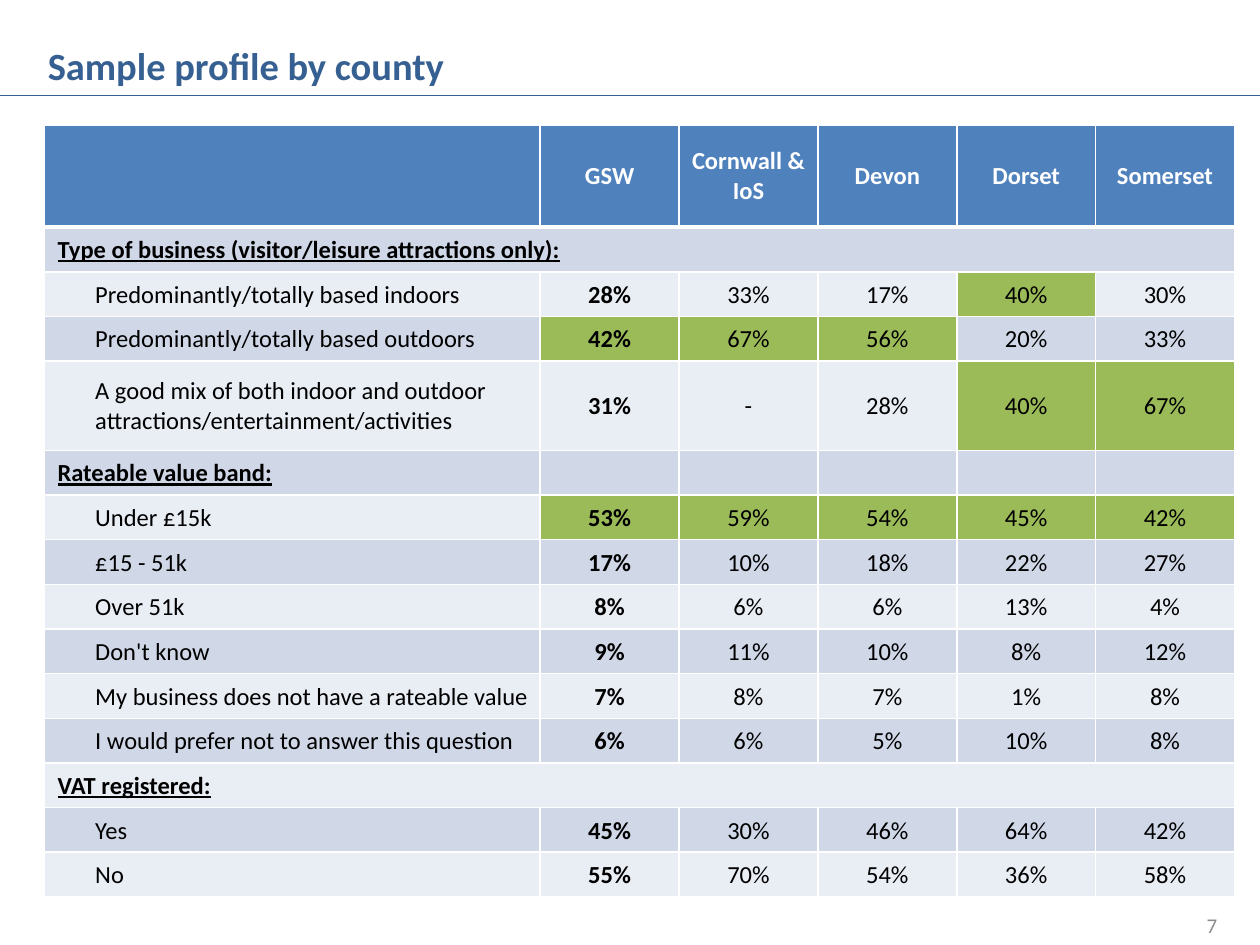
from lxml.etree import SubElement as Sub
from pptx import Presentation
from pptx.dml.color import RGBColor as Rgb
from pptx.enum.shapes import MSO_CONNECTOR as Link
from pptx.enum.text import MSO_ANCHOR as Anchor, MSO_AUTO_SIZE as Fit, PP_ALIGN as Align
from pptx.oxml import parse_xml
from pptx.oxml.ns import nsdecls, qn
from pptx.util import Cm, Pt

FONT = "Calibri"
HUES = {
    "title": "376092", "head": "4F81BD", "dark": "D0D8E8", "pale": "E9EDF4",
    "top": "9BBB59", "white": "FFFFFF", "black": "000000", "grey": "8C8C8C",
}
HEADS = ["", "GSW", "Cornwall & IoS", "Devon", "Dorset", "Somerset"]

# Each group: heading, merge the heading row, mark the top values, rows
GROUPS = [
    ("Type of business (visitor/leisure attractions only):", True, True, [
        ("Predominantly/totally based indoors", [28, 33, 17, 40, 30]),
        ("Predominantly/totally based outdoors", [42, 67, 56, 20, 33]),
        ("A good mix of both indoor and outdoor attractions/entertainment/activities",
         [31, None, 28, 40, 67]),
    ]),
    ("Rateable value band:", False, True, [
        ("Under £15k", [53, 59, 54, 45, 42]),
        ("£15 - 51k", [17, 10, 18, 22, 27]),
        ("Over 51k", [8, 6, 6, 13, 4]),
        ("Don't know", [9, 11, 10, 8, 12]),
        ("My business does not have a rateable value", [7, 8, 7, 1, 8]),
        ("I would prefer not to answer this question", [6, 6, 5, 10, 8]),
    ]),
    ("VAT registered:", True, False, [
        ("Yes", [45, 30, 46, 64, 42]),
        ("No", [55, 70, 54, 36, 58]),
    ]),
]


def hue(name):
    return Rgb.from_string(HUES[name])


def write(para, text, size, name, bold=False, line=False):
    run = para.add_run()
    run.text = text
    font = run.font
    font.name, font.size, font.bold, font.underline = FONT, Pt(size), bold, line
    font.color.rgb = hue(name)


def edge(cell, top, base):
    """Give a cell white borders of the stated top and bottom widths."""
    props = cell._tc.get_or_add_tcPr()
    for spot, (side, width) in enumerate(
            [("lnL", 1), ("lnR", 1), ("lnT", top), ("lnB", base)]):
        line = parse_xml(f'<a:{side} {nsdecls("a")} w="{Pt(width)}"><a:solidFill>'
                         f'<a:srgbClr val="{HUES["white"]}"/></a:solidFill></a:{side}>')
        props.insert(spot, line)


def fill(cell, name, row):
    cell.fill.solid()
    cell.fill.fore_color.rgb = hue(name)
    edge(cell, 3 if row == 1 else 1, 3 if row == 0 else 1)
    cell.vertical_anchor = Anchor.MIDDLE
    if row:
        cell.margin_left = cell.margin_right = cell.margin_top = Cm(0.03)
        cell.margin_bottom = 0


def label(cell, text, left, head=False):
    para = cell.text_frame.paragraphs[0]
    para._p.get_or_add_pPr().set("marL", str(Cm(left)))
    write(para, text, 14, "black", head, head)


def figure(cell, text, name="black", bold=False):
    para = cell.text_frame.paragraphs[0]
    para.alignment = Align.CENTER
    write(para, text, 14, name, bold)


def add_title(slide, x, y, w, h):
    title = slide.shapes.title
    title.left, title.top, title.width, title.height = map(Cm, (x, y, w, h))
    frame = title.text_frame
    frame.word_wrap, frame.auto_size = False, Fit.SHAPE_TO_FIT_TEXT
    frame.vertical_anchor = Anchor.TOP
    para = frame.paragraphs[0]
    para.alignment, para.line_spacing = Align.LEFT, 1.2
    write(para, "Sample profile by county", 22, "title", True)


def add_rule(slide, x, y, w):
    rule = slide.shapes.add_connector(Link.STRAIGHT, Cm(x), Cm(y), Cm(x + w), Cm(y))
    rule.line.color.rgb = hue("title")
    rule.line.width = Pt(0.75)
    Sub(rule._element.spPr, qn("a:effectLst"))


def add_grid(slide, x, y, w, h):
    count = 1 + sum(1 + len(rows) for *_, rows in GROUPS)
    grid = slide.shapes.add_table(count, len(HEADS), Cm(x), Cm(y), Cm(w), Cm(h)).table

    # Column widths and row heights
    first, thin, tall = 10, 0.9, 1.8
    for num, col in enumerate(grid.columns):
        col.width = Cm((w - first) / (len(HEADS) - 1) if num else first)
    for row in grid.rows:
        row.height = Cm(thin)
    grid.rows[4].height = Cm(tall)
    grid.rows[0].height = Cm(h - tall - thin * (count - 2))

    # Header row
    for col, text in enumerate(HEADS):
        fill(grid.cell(0, col), "head", 0)
        if text:
            figure(grid.cell(0, col), text, "white", True)

    # Groups, with the highest value of each column marked
    at = 1
    for head, merge, mark, rows in GROUPS:
        band = "dark" if at % 2 else "pale"
        for col in range(len(HEADS)):
            fill(grid.cell(at, col), band, at)
        label(grid.cell(at, 0), head, 0.24, True)
        if merge:
            grid.cell(at, 0).merge(grid.cell(at, len(HEADS) - 1))
        tops = [max(val or 0 for val in vals) for vals in zip(*(row[1] for row in rows))]
        for at, (text, vals) in enumerate(rows, at + 1):
            band = "dark" if at % 2 else "pale"
            fill(grid.cell(at, 0), band, at)
            label(grid.cell(at, 0), text, 1)
            for col, (val, top) in enumerate(zip(vals, tops), 1):
                cell = grid.cell(at, col)
                fill(cell, "top" if mark and val == top else band, at)
                figure(cell, "-" if val is None else f"{val}%", bold=col == 1)
        at += 1


def add_page(slide, x, y, w, h):
    frame = slide.shapes.add_textbox(Cm(x), Cm(y), Cm(w), Cm(h)).text_frame
    frame.word_wrap, frame.vertical_anchor = True, Anchor.MIDDLE
    para = frame.paragraphs[0]
    para.alignment = Align.RIGHT
    write(para, "7", 12, "grey")


def main():
    deck = Presentation()
    deck.slide_width, deck.slide_height = Cm(25.4), Cm(19.05)
    slide = deck.slides.add_slide(deck.slide_layouts[5])
    add_rule(slide, 0, 1.93, 25.4)
    add_grid(slide, 0.89, 2.52, 24, 15.56)
    add_title(slide, 0.71, 0.53, 8.6, 1.4)
    add_page(slide, 18.87, 18.14, 5.92, 1.02)
    deck.save("out.pptx")


if __name__ == "__main__":
    main()
